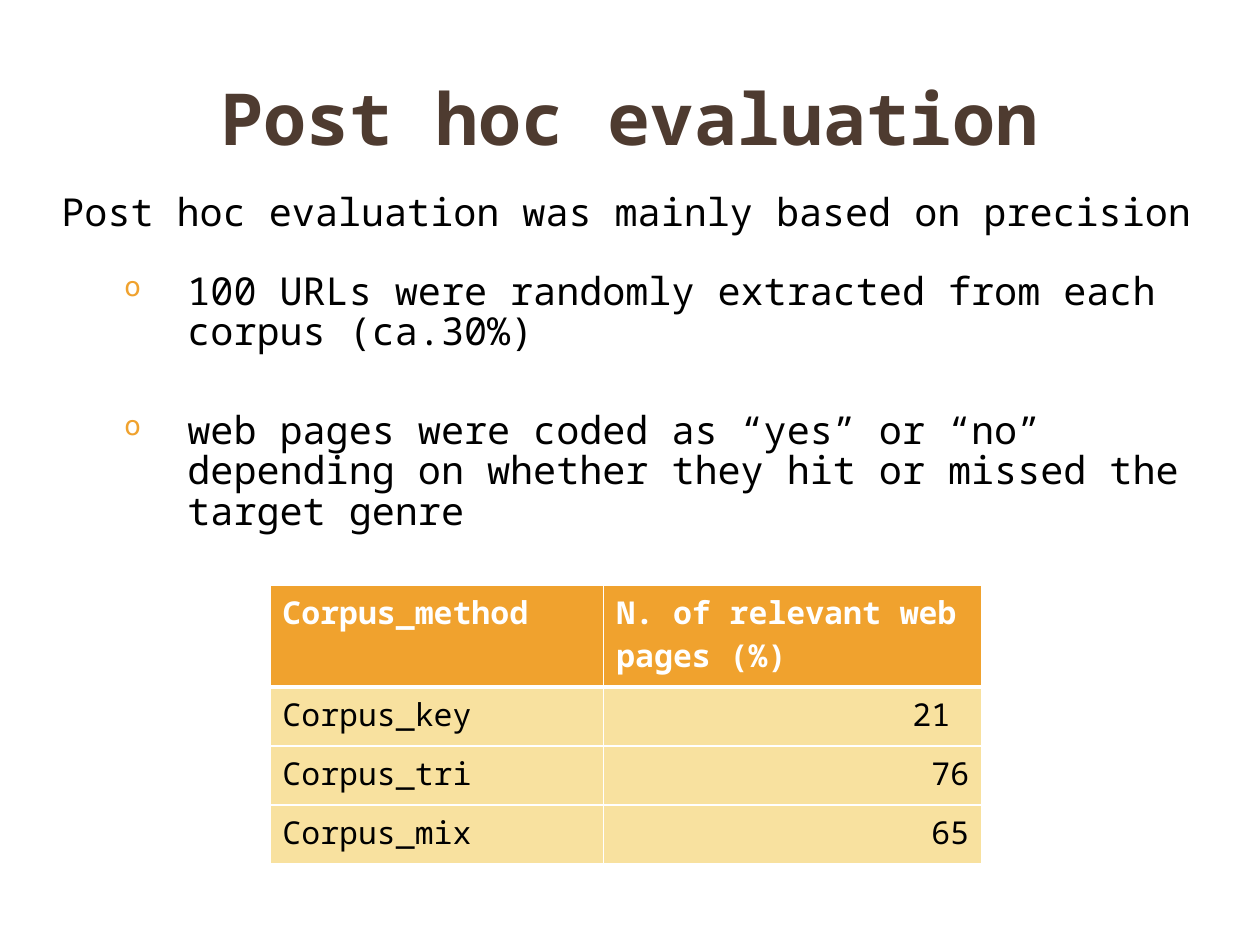
from dataclasses import dataclass

from lxml.etree import SubElement
from pptx import Presentation
from pptx.dml.color import RGBColor
from pptx.enum.text import MSO_ANCHOR, MSO_AUTO_SIZE, PP_ALIGN
from pptx.oxml.ns import qn
from pptx.util import Cm, Pt

FONT = "Noto Sans Mono"
BLACK, WHITE, BROWN = "000000", "FFFFFF", "4E3B30"
ORANGE, CREAM = "F0A22E", "F8E19F"


@dataclass
class BodyLine:
    text: str
    space_before: float = 0
    space_after: float = 0
    bullet: bool = False


@dataclass
class TableRow:
    method: str
    relevant: str
    height: float = 1.19
    header: bool = False


BODY_LINES = [
    BodyLine("Post hoc evaluation was mainly based on precision"),
    BodyLine("100 URLs were randomly extracted from each corpus (ca.30%)", 22, 5, True),
    BodyLine("web pages were coded as “yes” or “no” depending on whether "
             "they hit or missed the target genre", 28, 5, True),
]
TABLE_ROWS = [
    TableRow("Corpus_method", "N. of relevant web pages (%)", 2.06, True),
    TableRow("Corpus_key", "21 "),
    TableRow("Corpus_tri", "76"),
    TableRow("Corpus_mix", "65"),
]
COLUMN_WIDTHS = [6.73, 7.62]


def color(value: str) -> RGBColor:
    return RGBColor.from_string(value)


def add_run(paragraph, text: str, size: float, fill: str, bold: bool = False) -> None:
    run = paragraph.add_run()
    run.text = text
    run.font.name = FONT
    run.font.size = Pt(size)
    run.font.bold = bold
    run.font.color.rgb = color(fill)


def add_bullet(paragraph) -> None:
    properties = paragraph._p.get_or_add_pPr()
    properties.set("lvl", "1")
    properties.set("marL", str(Cm(2.54)))
    properties.set("indent", str(-Cm(1.27)))
    bullet_color = SubElement(properties, qn("a:buClr"))
    SubElement(bullet_color, qn("a:srgbClr"), val=ORANGE)
    SubElement(properties, qn("a:buSzPct"), val="70000")
    SubElement(properties, qn("a:buChar"), char="o")


def add_borders(cell, top: float, bottom: float) -> None:
    """Draw white borders, with the top and bottom widths in points."""
    properties = cell._tc.get_or_add_tcPr()
    for side, width in (("L", 1), ("R", 1), ("T", top), ("B", bottom)):
        line = SubElement(properties, qn(f"a:ln{side}"), w=str(Pt(width)))
        fill = SubElement(line, qn("a:solidFill"))
        SubElement(fill, qn("a:srgbClr"), val=WHITE)


def add_title(slide, text: str) -> None:
    title = slide.shapes.title
    title.left, title.top, title.width, title.height = Cm(1.27), Cm(0.76), Cm(22.86), Cm(3.18)
    frame = title.text_frame
    frame.auto_size = MSO_AUTO_SIZE.NONE
    frame.vertical_anchor = MSO_ANCHOR.MIDDLE
    paragraph = frame.paragraphs[0]
    paragraph.alignment = PP_ALIGN.CENTER
    add_run(paragraph, text, 41, BROWN, bold=True)


def add_body(slide, lines: list[BodyLine]) -> None:
    box = slide.shapes.add_textbox(Cm(0.99), Cm(3.78), Cm(23.67), Cm(6.91))
    frame = box.text_frame
    frame.word_wrap = True
    frame.auto_size = MSO_AUTO_SIZE.SHAPE_TO_FIT_TEXT
    for index, line in enumerate(lines):
        paragraph = frame.add_paragraph() if index else frame.paragraphs[0]
        paragraph.line_spacing = 0.88
        paragraph.space_before = Pt(line.space_before)
        paragraph.space_after = Pt(line.space_after)
        if line.bullet:
            add_bullet(paragraph)
        add_run(paragraph, line.text, 22, BLACK)


def add_results_table(slide, rows: list[TableRow]) -> None:
    frame = slide.shapes.add_table(
        len(rows), len(COLUMN_WIDTHS), Cm(5.44), Cm(11.79),
        Cm(sum(COLUMN_WIDTHS)), Cm(sum(row.height for row in rows)))
    table = frame.table
    for column, width in zip(table.columns, COLUMN_WIDTHS):
        column.width = Cm(width)
    for row_index, row in enumerate(rows):
        table.rows[row_index].height = Cm(row.height)
        for column_index, text in enumerate((row.method, row.relevant)):
            cell = table.cell(row_index, column_index)
            add_borders(cell, 3 if row_index == 1 else 1, 3 if row.header else 1)
            cell.fill.solid()
            cell.fill.fore_color.rgb = color(ORANGE if row.header else CREAM)
            paragraph = cell.text_frame.paragraphs[0]
            if column_index == 1 and not row.header:
                paragraph.alignment = PP_ALIGN.RIGHT
            add_run(paragraph, text, 18, WHITE if row.header else BLACK, row.header)


def main() -> None:
    presentation = Presentation()
    presentation.slide_width, presentation.slide_height = Cm(25.4), Cm(19.05)
    slide = presentation.slides.add_slide(presentation.slide_layouts.get_by_name("Title Only"))
    add_title(slide, "Post hoc evaluation")
    add_results_table(slide, TABLE_ROWS)
    add_body(slide, BODY_LINES)
    presentation.save("out.pptx")


if __name__ == "__main__":
    main()
